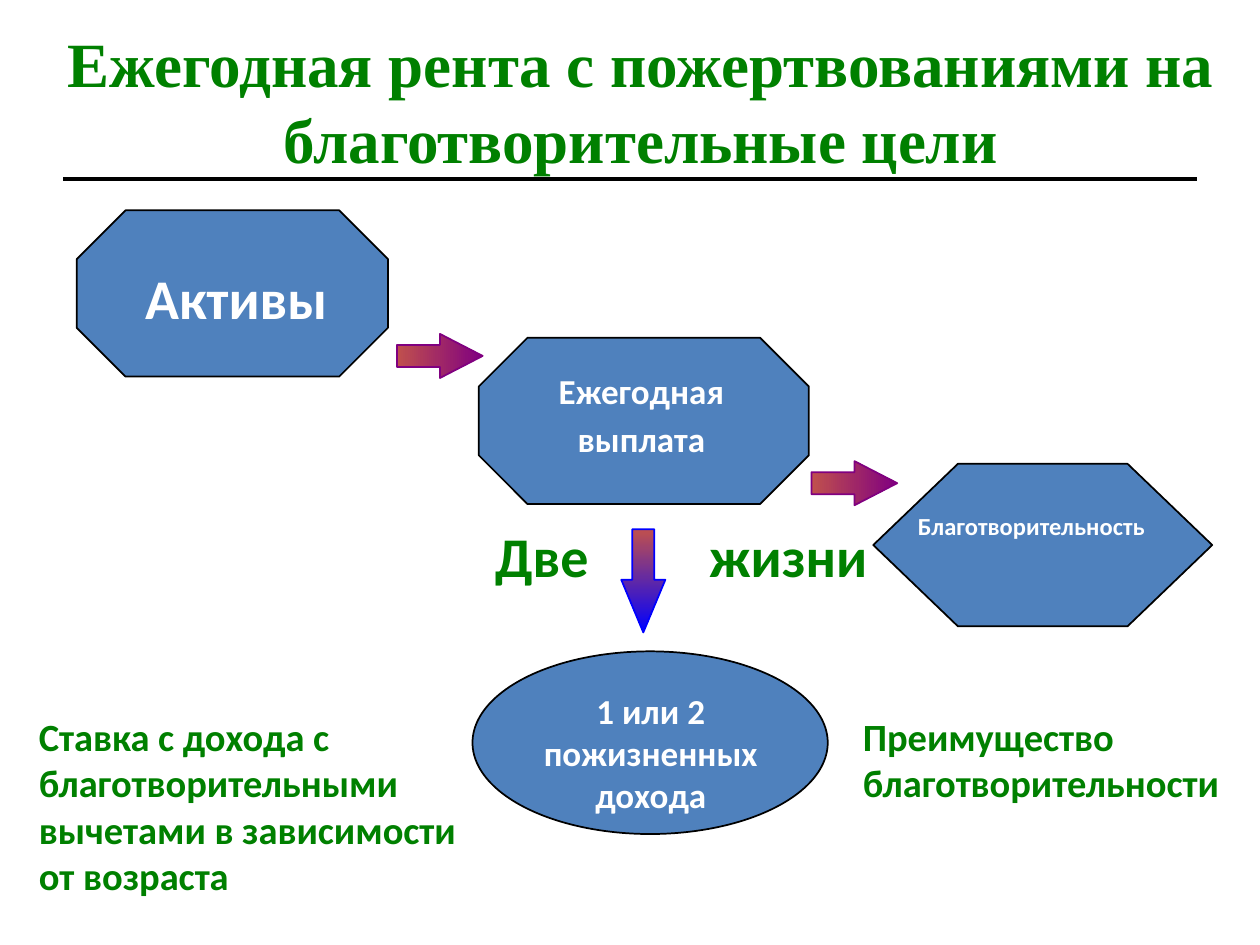
"""Builds a slide on the flow of a charitable gift annuity."""
from lxml import etree
from pptx import Presentation
from pptx.dml.color import RGBColor
from pptx.enum.shapes import MSO_CONNECTOR, MSO_SHAPE
from pptx.enum.text import MSO_ANCHOR, MSO_AUTO_SIZE, PP_ALIGN
from pptx.oxml.ns import qn
from pptx.util import Pt

OCTAGON, HEXAGON, OVAL = MSO_SHAPE.OCTAGON, MSO_SHAPE.HEXAGON, MSO_SHAPE.OVAL
RIGHT, DOWN = MSO_SHAPE.RIGHT_ARROW, MSO_SHAPE.DOWN_ARROW
CENTER, LEFT = PP_ALIGN.CENTER, PP_ALIGN.LEFT
COLORS = {"green": "008000", "white": "FFFFFF", "black": "000000", "blue": "4F81BD",
          "red": "C0504D", "purple": "800080", "bright": "0000FF"}
COLORS = {name: RGBColor.from_string(value) for name, value in COLORS.items()}


def write(frame, text, size, color="green", font="Calibri", align=LEFT,
          spacing=1.0, anchor=MSO_ANCHOR.TOP):
    frame.word_wrap = True
    frame.auto_size = MSO_AUTO_SIZE.NONE
    frame.vertical_anchor = anchor
    paragraph = frame.paragraphs[0]
    paragraph.alignment = align
    paragraph.line_spacing = spacing
    run = paragraph.add_run()
    run.text = text
    run.font.size = Pt(size)
    run.font.name = font
    run.font.bold = True
    run.font.color.rgb = COLORS[color]
    return paragraph


def draw(parent, kind, box, adjustments, outline):
    shape = parent.add_shape(kind, *map(Pt, box))
    shape.shadow.inherit = False
    for index, value in enumerate(adjustments):
        shape.adjustments[index] = value
    shape.line.color.rgb = COLORS[outline]
    shape.line.width = Pt(1)
    return shape


prs = Presentation()
prs.slide_width, prs.slide_height = Pt(720), Pt(540)
slide = prs.slides.add_slide(prs.slide_layouts[5])
shapes = slide.shapes

title = shapes.title
title.left, title.top, title.width, title.height = map(Pt, (12.24, 12.24, 707.76, 90))
write(title.text_frame, "Ежегодная рента с пожертвованиями на благотворительные цели", 36,
      font="Times New Roman", align=CENTER, anchor=MSO_ANCHOR.MIDDLE)

notes = [
    ("Ставка с дохода с благотворительными вычетами в зависимости от возраста",
     (15.1, 404, 258.5, 113.8)),
    ("Преимущество благотворительности", (486, 404, 224.6, 60.5)),
]
for text, box in notes:
    write(shapes.add_textbox(*map(Pt, box)).text_frame, text, 22)

arrows = [
    (DOWN, (355, 302.4, 25.2, 59), 1.194, "bright", 270),
    (RIGHT, (226.8, 190.8, 49, 25.2), 0.968, "purple", 0),
    (RIGHT, (463.7, 263.5, 49, 25.2), 0.968, "purple", 0),
]
for kind, box, head, color, angle in arrows:
    arrow = draw(shapes, kind, box, [0.5, head], color)
    arrow.fill.gradient()
    arrow.fill.gradient_angle = angle
    for stop, name in zip(arrow.fill.gradient_stops, ("red", color)):
        stop.color.rgb = COLORS[name]

stages = [
    (OVAL, (270, 372.2, 203, 104.4), [], "1 или 2 пожизненных дохода",
     (293.8, 390.2, 156.2, 79.9), 20, 1.0),
    (OCTAGON, (43.9, 120.2, 177.8, 95), [0.293], "Активы",
     (52.6, 141.1, 164.9, 49), 32, 1.15),
    (OCTAGON, (273.6, 193, 188.6, 95), [0.293], "Ежегодная выплата",
     (293.8, 203.8, 145.4, 61.2), 20, 1.15),
    (HEXAGON, (499, 265, 193.7, 92.9), [0.521, 1.155], "Благотворительность",
     (509.8, 285.8, 159.1, 25.9), 14, 1.15),
]
for kind, box, adjustments, text, text_box, size, spacing in stages:
    stage = shapes.add_group_shape().shapes
    outline = draw(stage, kind, box, adjustments, "black")
    outline.fill.solid()
    outline.fill.fore_color.rgb = COLORS["blue"]
    label = stage.add_textbox(*map(Pt, text_box))
    write(label.text_frame, text, size, color="white", align=CENTER, spacing=spacing)

lives = shapes.add_textbox(Pt(275.8), Pt(294.5), Pt(270.7), Pt(46.1))
lives_text = write(lives.text_frame, "Две\tжизни", 32)
tabs = etree.SubElement(lives_text._p.get_or_add_pPr(), qn("a:tabLst"))
etree.SubElement(tabs, qn("a:tab"), pos=str(Pt(122.5)), algn="l")

rule = shapes.add_connector(MSO_CONNECTOR.STRAIGHT, Pt(36), Pt(102.2), Pt(684), Pt(102.2))
rule.line.color.rgb = COLORS["black"]
rule.line.width = Pt(2.25)
etree.SubElement(rule._element.spPr, qn("a:effectLst"))

prs.save("out.pptx")
